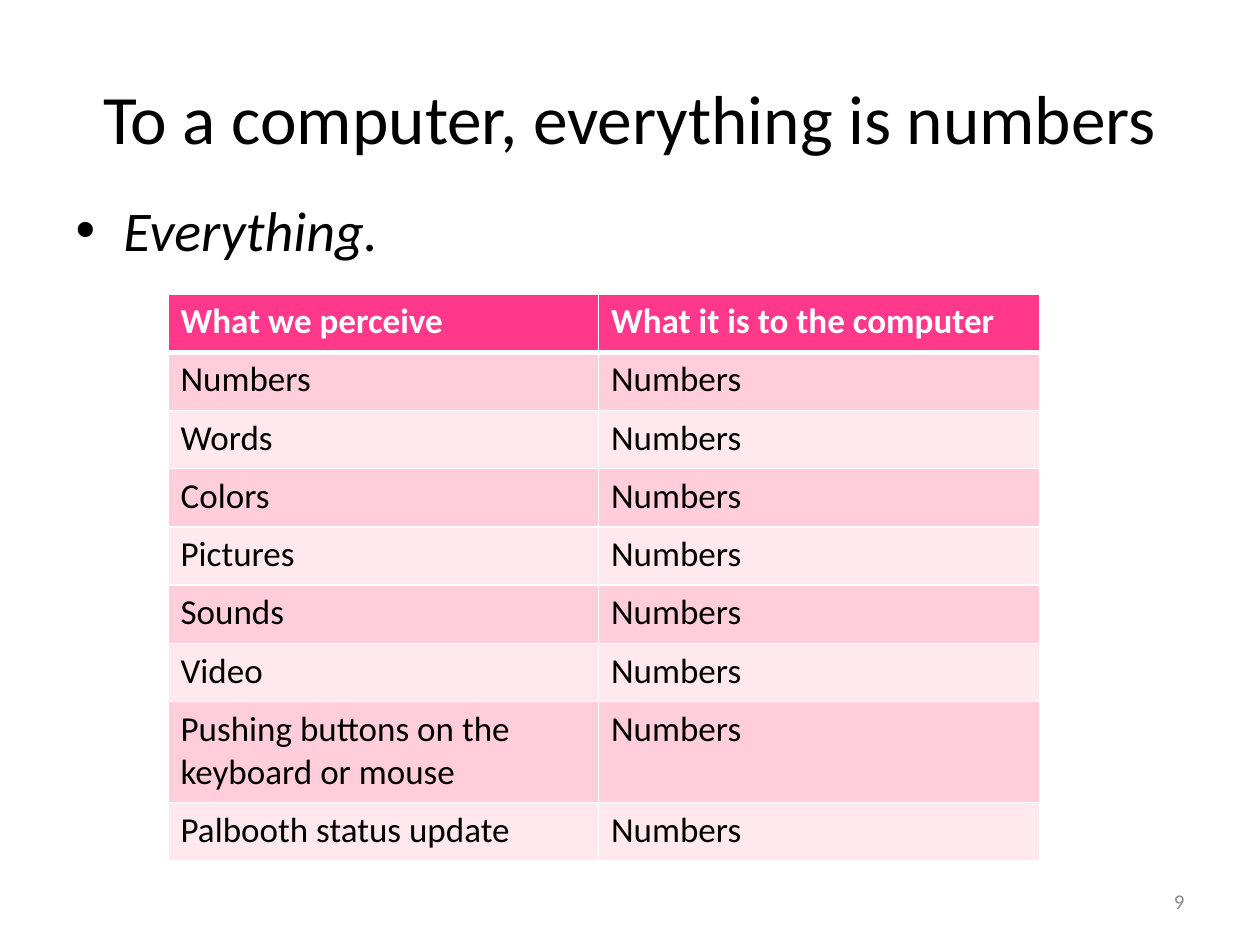
from lxml.etree import SubElement
from pptx import Presentation
from pptx.dml.color import RGBColor
from pptx.enum.text import MSO_ANCHOR, MSO_AUTO_SIZE, PP_ALIGN
from pptx.oxml import parse_xml
from pptx.oxml.ns import nsdecls, qn
from pptx.util import Inches, Pt

COLORS = {
    "text": "000000",
    "muted": "8C8C8C",
    "white": "FFFFFF",
    "header": "FF388C",
    "band_dark": "FFCEDA",
    "band_light": "FFE8EE",
}
PERCEIVED = [
    "Numbers",
    "Words",
    "Colors",
    "Pictures",
    "Sounds",
    "Video",
    "Pushing buttons on the keyboard or mouse",
    "Palbooth status update",
]
TO_COMPUTER = "Numbers"
COLUMNS = [41, 42]
ROW, TALL_ROW = 5.55, 9.6


def grid(*units):
    """Lengths on a grid of 120 columns by 90 rows, 12 to the inch."""
    return [Inches(unit / 12) for unit in units]


class SlideBuilder:
    font = "Calibri"

    def __init__(self, presentation):
        self.slide = presentation.slides.add_slide(presentation.slide_layouts[1])

    def add_text(self, paragraph, text, size, color="text", bold=False, italic=False):
        run = paragraph.add_run()
        run.text = text
        run.font.name = self.font
        run.font.size = Pt(size)
        run.font.bold = bold
        run.font.italic = italic
        run.font.color.rgb = RGBColor.from_string(COLORS[color])

    def place(self, holder, area):
        """Move a text holder to a grid area and return its first paragraph."""
        holder.left, holder.top, holder.width, holder.height = grid(*area)
        frame = holder.text_frame
        frame.word_wrap = True
        frame.auto_size = MSO_AUTO_SIZE.NONE
        return frame.paragraphs[0]

    def title(self, text, area):
        holder = self.slide.shapes.title
        paragraph = self.place(holder, area)
        holder.text_frame.vertical_anchor = MSO_ANCHOR.MIDDLE
        paragraph.alignment = PP_ALIGN.CENTER
        self.add_text(paragraph, text, 39.6)

    def bullet(self, text, area):
        paragraph = self.place(self.slide.placeholders[1], area)
        properties = paragraph._p.get_or_add_pPr()
        indent = Inches(0.38)
        properties.set("marL", str(indent))
        properties.set("indent", str(-indent))
        SubElement(properties, qn("a:buChar")).set("char", "•")
        self.add_text(paragraph, text, 32, italic=True)

    def page_number(self, text, area):
        box = self.slide.shapes.add_textbox(*grid(*area))
        paragraph = self.place(box, area)
        box.text_frame.vertical_anchor = MSO_ANCHOR.MIDDLE
        paragraph.alignment = PP_ALIGN.RIGHT
        self.add_text(paragraph, text, 12, "muted")

    def borders(self, cell, **widths):
        """Draw white cell borders; the sides L, R, T and B are 1 pt by default."""
        properties = cell._tc.get_or_add_tcPr()
        for position, side in enumerate("LRTB"):
            width = Pt(widths.get(side, 1))
            properties.insert(position, parse_xml(
                f'<a:ln{side} {nsdecls("a")} w="{width}"><a:solidFill>'
                f'<a:srgbClr val="{COLORS["white"]}"/></a:solidFill></a:ln{side}>'))

    def cell(self, cell, text, fill, color="text", bold=False, **widths):
        cell.fill.solid()
        cell.fill.fore_color.rgb = RGBColor.from_string(COLORS[fill])
        self.borders(cell, **widths)
        self.add_text(cell.text_frame.paragraphs[0], text, 20, color, bold)

    def table(self, headings, records, left, top, columns, heights):
        area = grid(left, top, sum(columns), sum(heights))
        table = self.slide.shapes.add_table(len(heights), len(columns), *area).table
        for column, width in zip(table.columns, grid(*columns)):
            column.width = width
        for row, height in zip(table.rows, grid(*heights)):
            row.height = height
        for column, heading in enumerate(headings):
            self.cell(table.cell(0, column), heading, "header", "white", True, B=3)
        for row, record in enumerate(records, start=1):
            band = "band_dark" if row % 2 else "band_light"
            top_width = 3 if row == 1 else 1
            for column, text in enumerate(record):
                self.cell(table.cell(row, column), text, band, T=top_width)


def main():
    presentation = Presentation()
    presentation.slide_width, presentation.slide_height = grid(120, 90)
    builder = SlideBuilder(presentation)
    builder.title("To a computer, everything is numbers", (6, 3.6, 108, 15))
    builder.bullet("Everything.", (6, 18, 107, 59.4))
    builder.page_number("9", (86, 83.4, 28, 4.8))
    heights = [ROW] + [TALL_ROW if len(name) > 30 else ROW for name in PERCEIVED]
    builder.table(
        ["What we perceive", "What it is to the computer"],
        [(name, TO_COMPUTER) for name in PERCEIVED],
        16, 28, COLUMNS, heights,
    )
    presentation.save("out.pptx")


if __name__ == "__main__":
    main()
